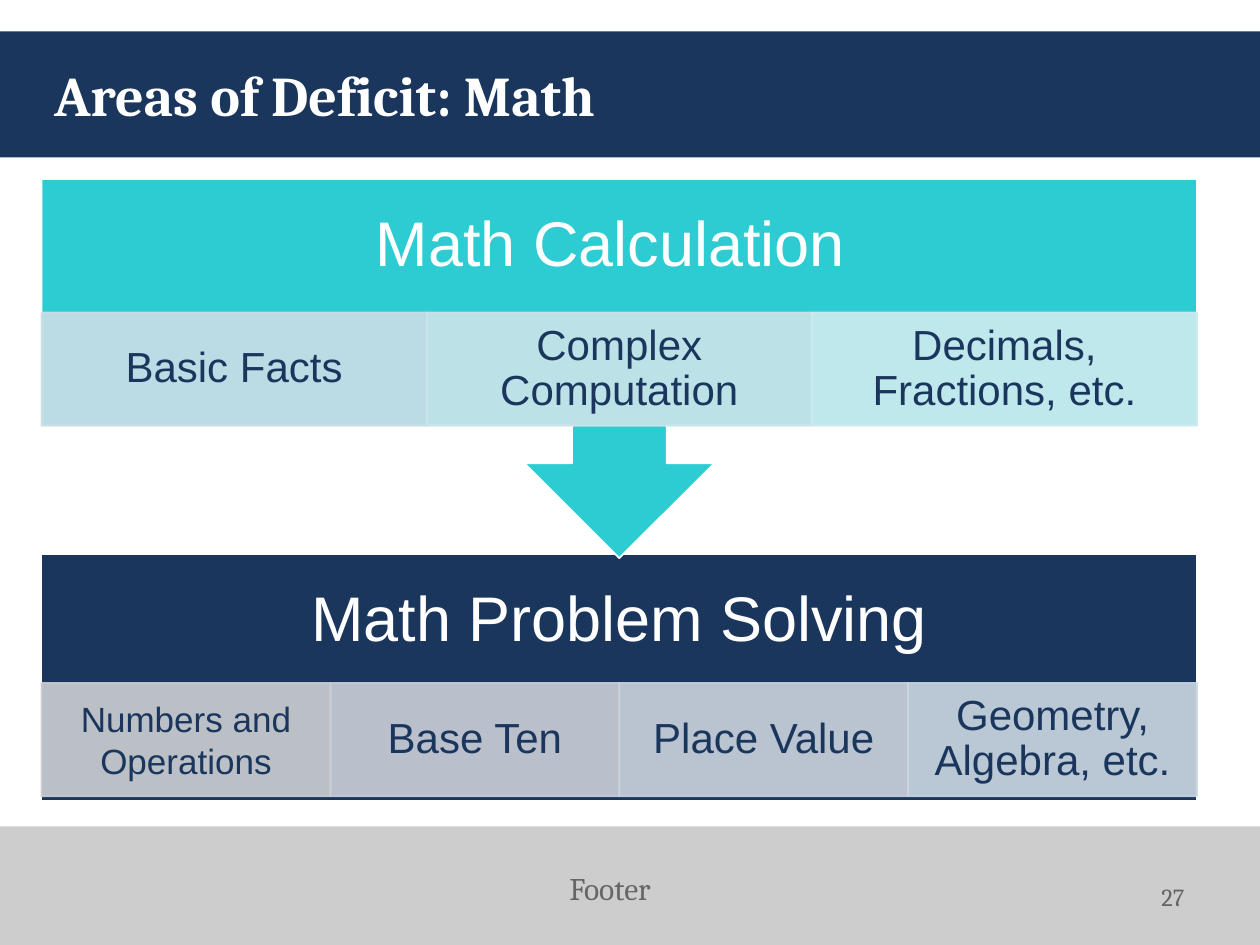
from lxml import etree
from pptx import Presentation
from pptx.dml.color import RGBColor
from pptx.enum.shapes import MSO_SHAPE
from pptx.enum.text import MSO_ANCHOR, PP_ALIGN
from pptx.oxml.ns import qn
from pptx.util import Inches, Pt

RECT, CALLOUT = MSO_SHAPE.RECTANGLE, MSO_SHAPE.UP_ARROW_CALLOUT
TOP, MIDDLE = MSO_ANCHOR.TOP, MSO_ANCHOR.MIDDLE
LEFT, CENTER, RIGHT = PP_ALIGN.LEFT, PP_ALIGN.CENTER, PP_ALIGN.RIGHT
NAVY, TEAL, GRAY, WHITE, DIM = "1B365D", "2DCCD3", "CDCDCD", "FFFFFF", "666666"


def add_block(kind, x, y, w, h, color, edge=None, alpha=None):
    block = slide.shapes.add_shape(kind, Inches(x), Inches(y), Inches(w), Inches(h))
    block.shadow.inherit = False
    block.fill.solid()
    block.fill.fore_color.rgb = RGBColor.from_string(color)
    if edge:
        block.line.color.rgb = RGBColor.from_string(edge)
        block.line.width = Pt(1)
    else:
        block.line.fill.background()
    if alpha:
        for srgb in block._element.spPr.iter(qn("a:srgbClr")):
            etree.SubElement(srgb, qn("a:alpha"), val=str(alpha * 1000))
    return block


def write(holder, text, size, font, color, align=LEFT, anchor=TOP, inset=(0.1, 0.05), spacing=1.0):
    frame = holder.text_frame
    frame.word_wrap = True
    frame.vertical_anchor = anchor
    frame.margin_left = frame.margin_right = Inches(inset[0])
    frame.margin_top = frame.margin_bottom = Inches(inset[1])
    paragraph = frame.paragraphs[0]
    paragraph.alignment = align
    paragraph.line_spacing = spacing
    run = paragraph.add_run()
    run.text = text
    run.font.size = Pt(size)
    run.font.name = font
    run.font.color.rgb = RGBColor.from_string(color)
    return run


prs = Presentation()
prs.slide_width, prs.slide_height = Inches(10), Inches(7.5)
slide = prs.slides.add_slide(prs.slide_layouts[5])

add_block(RECT, 0, 0.25, 10, 1, NAVY)
add_block(RECT, 0, 6.56, 10, 0.94, GRAY)

title = slide.shapes.title
title.left, title.top, title.width, title.height = Inches(0.33), Inches(0.25), Inches(9.08), Inches(1)
write(title, "Areas of Deficit: Math", 32, "Cambria", WHITE, anchor=MIDDLE).font.bold = True
slide.shapes._spTree.append(title._element)

area_left, area_width, cell_height = 0.33, 9.17, 0.9
areas = [
    ("Math Problem Solving", RECT, 4.4, 1.96, NAVY, 0, 5.42, [
        ("Numbers and Operations", "CDCED2", 20, 0.16, 1.0),
        ("Base Ten", "CCD0D8", 24, 0.19, 0.9),
        ("Place Value", "CBD4DD", 24, 0.19, 0.9),
        ("Geometry, Algebra, etc.", "CBD8E2", 24, 0.19, 0.9),
    ]),
    ("Math Calculation ", CALLOUT, 1.42, 3.01, TEAL, 180, 2.48, [
        ("Basic Facts", "CCDEE7", 24, 0.19, 0.9),
        ("Complex Computation", "CCE5EB", 24, 0.19, 0.9),
        ("Decimals, Fractions, etc.", "CEECEF", 24, 0.19, 0.9),
    ]),
]
for name, kind, top, height, color, rotation, cell_top, skills in areas:
    panel = add_block(kind, area_left, top, area_width, height, color, WHITE)
    panel.rotation = rotation
    heading = slide.shapes.add_textbox(Inches(area_left), Inches(top), Inches(area_width), Inches(1.06))
    write(heading, name, 36, "Arial", WHITE, CENTER, MIDDLE, (0.28, 0.28), 0.9)
    cell_width = area_width / len(skills)
    for i, (skill, tint, size, side, spacing) in enumerate(skills):
        cell = add_block(RECT, area_left + i * cell_width, cell_top, cell_width, cell_height, tint, tint, 90)
        write(cell, skill, size, "Arial", NAVY, CENTER, MIDDLE, (side, 0.03), spacing)

page_number = slide.shapes.add_textbox(Inches(9), Inches(6.95), Inches(0.5), Inches(0.4))
write(page_number, "27", 14, "Cambria", DIM, RIGHT)
footer = slide.shapes.add_textbox(Inches(4.42), Inches(6.85), Inches(5.58), Inches(0.5))
write(footer, "Footer", 18, "Cambria", DIM)

prs.save("out.pptx")
